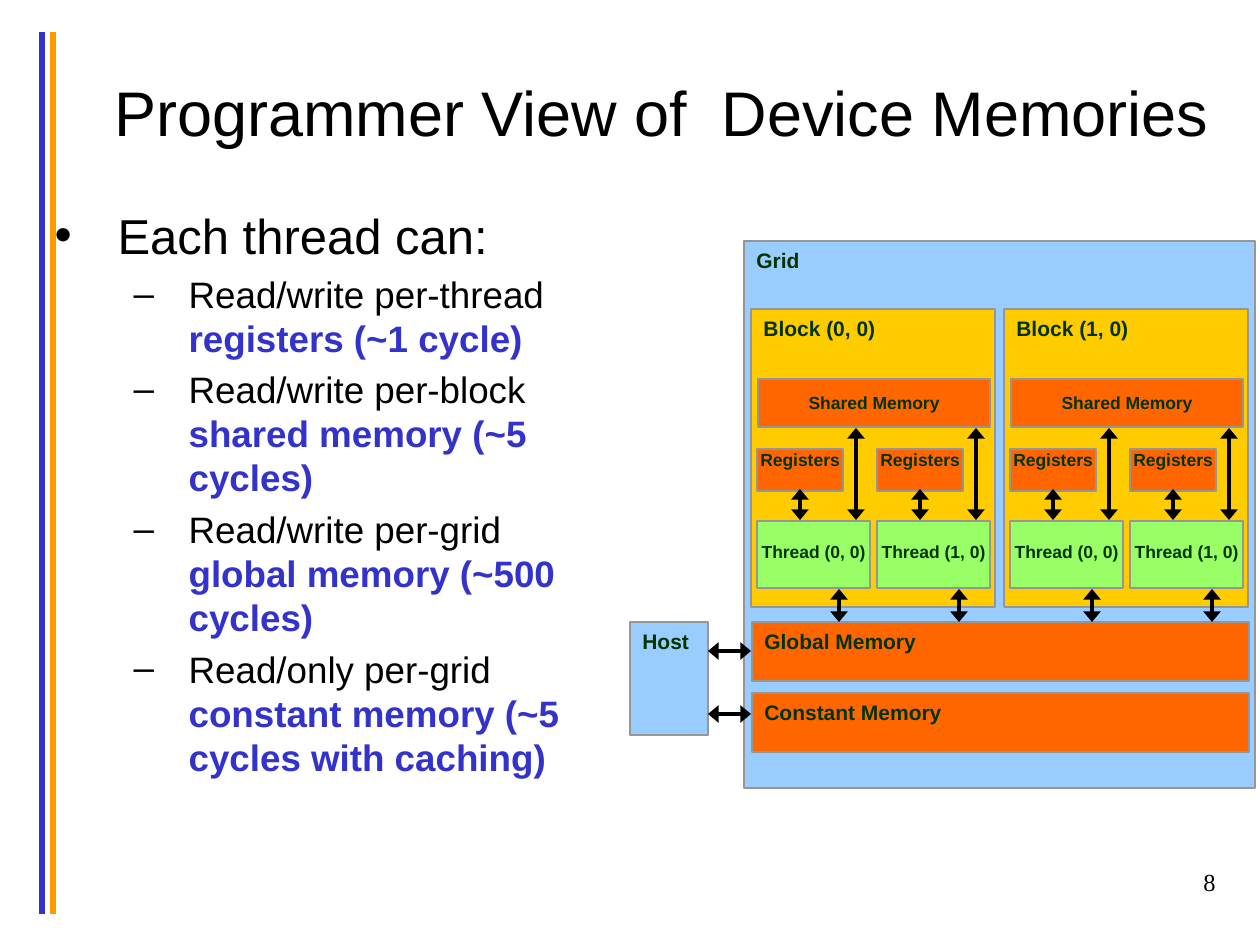
from dataclasses import dataclass

from lxml.etree import SubElement
from pptx import Presentation
from pptx.dml.color import RGBColor
from pptx.enum.shapes import MSO_CONNECTOR as Connector, MSO_SHAPE as Shape
from pptx.enum.text import MSO_ANCHOR as Anchor, MSO_AUTO_SIZE as AutoSize, PP_ALIGN as Align
from pptx.oxml.ns import qn
from pptx.util import Emu, Pt

PX_PER_INCH = 126


@dataclass(frozen=True)
class Theme:
    """Colours, fonts and type sizes of the slide."""
    black: str = "000000"
    accent: str = "3333CC"
    stripe: str = "FF9900"
    label: str = "003300"
    border: str = "969696"
    grid: str = "99CCFF"
    block: str = "FFCC00"
    memory: str = "FF6600"
    thread: str = "99FF66"
    sans: str = "Arial"
    serif: str = "Times New Roman"
    title_size: int = 36
    lead_size: int = 28
    item_size: int = 21
    number_size: int = 14
    label_size: int = 12
    small_size: int = 10


THEME = Theme()
ITEMS = [
    ("Read/write per-thread ", "registers (~1 cycle)"),
    ("Read/write per-block ", "shared memory (~5 cycles)"),
    ("Read/write per-grid ", "global memory (~500 cycles)"),
    ("Read/only per-grid ", "constant memory (~5 cycles with caching)"),
]


def px(length):
    """Turn pixels into EMU."""
    return Emu(round(length * 914400 / PX_PER_INCH))


def set_values(target, values):
    """Set attributes of an object from a dict."""
    for name, value in values.items():
        setattr(target, name, value)


def place(shape, left, top, width, height):
    """Move and size a shape in pixels."""
    set_values(shape, {"left": px(left), "top": px(top),
                       "width": px(width), "height": px(height)})


def add_span(para, text, size, color=THEME.black, bold=False, font=THEME.sans):
    """Add a formatted run to a paragraph."""
    span = para.add_run()
    span.text = text
    set_values(span.font, {"name": font, "size": Pt(size), "bold": bold})
    span.font.color.rgb = RGBColor.from_string(color)


def add_title(page, text):
    """Fill the title placeholder."""
    title = page.shapes.title
    place(title, 63, 38, 1197, 147)
    set_values(title.text_frame, {"vertical_anchor": Anchor.MIDDLE,
                                  "word_wrap": True, "auto_size": AutoSize.NONE})
    para = title.text_frame.paragraphs[0]
    para.alignment = Align.CENTER
    add_span(para, text, THEME.title_size)


def format_bullet(para, symbol, margin, hanging, values):
    """Give a paragraph its bullet, indents and spacing."""
    set_values(para, values)
    props = para._p.get_or_add_pPr()
    props.set("marL", str(px(margin)))
    props.set("indent", str(-px(hanging)))
    SubElement(props, qn("a:buFont")).set("typeface", THEME.sans)
    SubElement(props, qn("a:buChar")).set("char", symbol)


def add_body(page, lead, items):
    """Fill the body placeholder with a lead line and its sub-items."""
    body = page.placeholders[1]
    place(body, 42, 199, 588, 378)
    frame = body.text_frame
    set_values(frame, {"word_wrap": True, "auto_size": AutoSize.NONE,
                       "vertical_anchor": Anchor.TOP})
    para = frame.paragraphs[0]
    format_bullet(para, "•", 63, 63, {"space_before": Pt(5.6)})
    add_span(para, lead, THEME.lead_size)
    for access, memory in items:
        para = frame.add_paragraph()
        format_bullet(para, "–", 134, 55, {"level": 1, "space_before": Pt(4.2)})
        add_span(para, access, THEME.item_size)
        add_span(para, memory, THEME.item_size, THEME.accent, True)


def add_box(page, text, bounds, fill):
    """Add a bordered box with a label at its top left."""
    box = page.shapes.add_shape(Shape.RECTANGLE, *map(px, bounds))
    box.shadow.inherit = False
    box.fill.solid()
    box.fill.fore_color.rgb = RGBColor.from_string(fill)
    box.line.color.rgb = RGBColor.from_string(THEME.border)
    box.line.width = Pt(0.75)
    set_values(box.text_frame, {"word_wrap": True, "vertical_anchor": Anchor.TOP})
    para = box.text_frame.paragraphs[0]
    para.alignment = Align.LEFT
    add_span(para, text, THEME.label_size, THEME.label, True)
    return box


def add_small_box(page, text, bounds, fill, inset):
    """Add a box with a small centred label below a top inset."""
    frame = add_box(page, text, bounds, fill).text_frame
    set_values(frame, {"margin_left": 0, "margin_right": 0,
                       "margin_top": px(inset), "margin_bottom": 0})
    para = frame.paragraphs[0]
    para.alignment = Align.CENTER
    para.runs[0].font.size = Pt(THEME.small_size)


def add_line(page, ends, color, width):
    """Add a straight line and return its line properties element."""
    line = page.shapes.add_connector(Connector.STRAIGHT, *map(px, ends))
    line.line.color.rgb = RGBColor.from_string(color)
    line.line.width = Pt(width)
    SubElement(line._element.spPr, qn("a:effectLst"))
    return line.line._get_or_add_ln()


def add_arrow(page, *ends):
    """Add a double-headed arrow with wide heads."""
    props = add_line(page, ends, THEME.black, 2)
    for end in ("a:headEnd", "a:tailEnd"):
        SubElement(props, qn(end), {"type": "triangle", "w": "lg", "len": "med"})


def add_thread(page, left, index):
    """Add a thread with its registers and memory arrows."""
    add_small_box(page, f"Thread ({index}, 0)", (left, 521, 113, 67), THEME.thread, 20)
    add_small_box(page, "Registers", (left, 449, 86, 42), THEME.memory, 0)
    for offset, start, end in ((99, 520, 428), (43, 520, 489), (82, 589, 622)):
        add_arrow(page, left + offset, start, left + offset, end)


def add_block(page, left, index):
    """Add a block with shared memory and two threads."""
    add_box(page, f"Block ({index}, 0)", (left, 309, 244, 298), THEME.block)
    add_small_box(page, "Shared Memory", (left + 7, 379, 232, 48), THEME.memory, 13)
    for thread in range(2):
        add_thread(page, left + 6 + 120 * thread, thread)


def add_diagram(page):
    """Add the grid, its blocks, the host and the device memories."""
    add_box(page, "Grid", (744, 241, 511, 547), THEME.grid)
    add_box(page, "Global Memory", (752, 622, 497, 59), THEME.memory)
    add_box(page, "Constant Memory", (752, 693, 497, 59), THEME.memory)
    for block in range(2):
        add_block(page, 751 + 253 * block, block)
    add_box(page, "Host", (630, 622, 78, 113), THEME.grid)
    for level in (651, 714):
        add_arrow(page, 708, level, 751, level)


def add_page_number(page, number):
    """Add the page number at the lower right."""
    box = page.shapes.add_textbox(*map(px, (966, 861, 262, 63)))
    box.text_frame.word_wrap = True
    para = box.text_frame.paragraphs[0]
    para.alignment = Align.RIGHT
    add_span(para, number, THEME.number_size, font=THEME.serif)


def main():
    """Build and save the slide."""
    deck = Presentation()
    set_values(deck, {"slide_width": px(1260), "slide_height": px(945)})
    page = deck.slides.add_slide(deck.slide_layouts[1])
    for left, color in ((42, THEME.accent), (53, THEME.stripe)):
        add_line(page, (left, 32, left, 914), color, 3)
    add_page_number(page, "8")
    add_title(page, "Programmer View of  Device Memories")
    add_body(page, "Each thread can:", ITEMS)
    add_diagram(page)
    deck.save("out.pptx")


if __name__ == "__main__":
    main()
